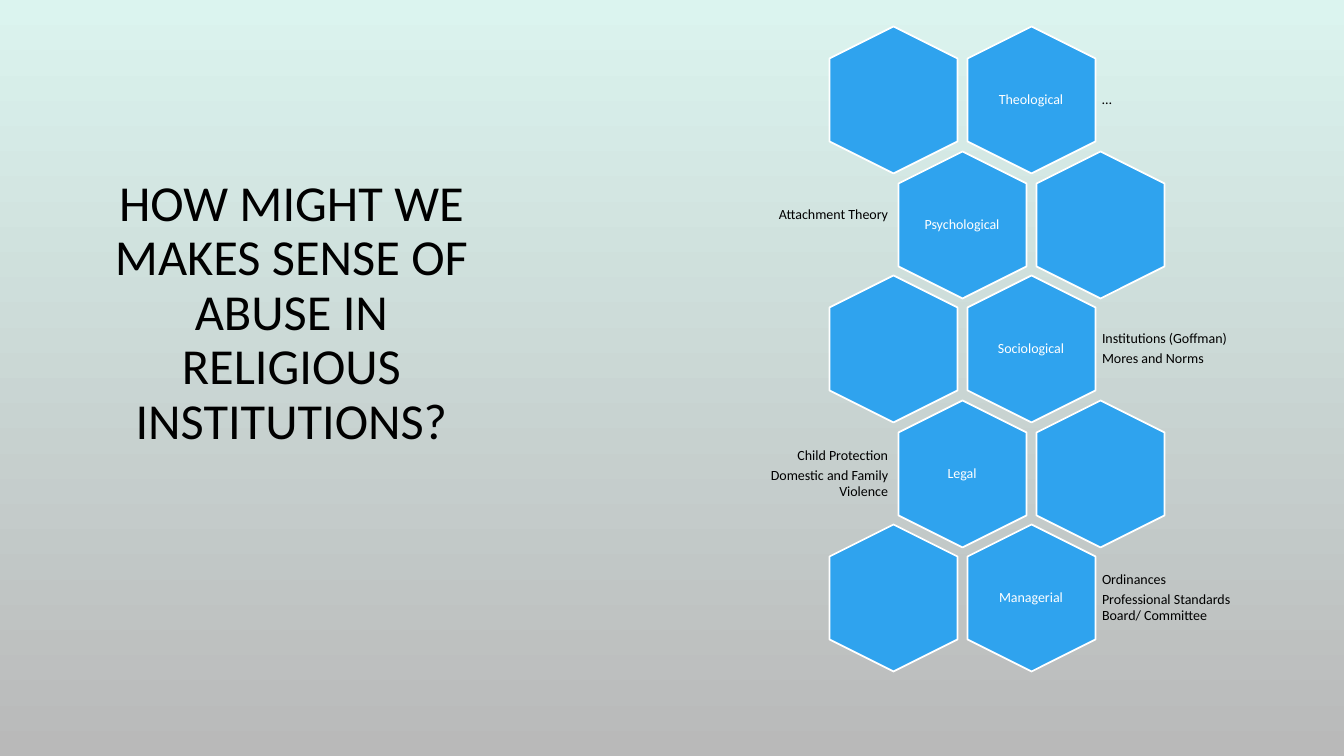
import dataclasses

import pptx
import pptx.dml.color
import pptx.enum.shapes
import pptx.enum.text
import pptx.util

ALIGN = pptx.enum.text.PP_ALIGN


@dataclasses.dataclass(frozen=True)
class Theme:
    font: str = "Calibri"
    bg_top: str = "DBF4EF"
    bg_bottom: str = "B9B9B9"
    hexagon: str = "2FA3EE"
    light: str = "FFFFFF"
    dark: str = "000000"
    title_size: int = 36
    label_size: int = 10
    outline: float = 1.25
    line_spacing: float = 0.9
    space_after: float = 3.5


def px(n):
    return pptx.util.Emu(round(n * 12192000 / 1344))


def rgb(code):
    return pptx.dml.color.RGBColor.from_string(code)


class SlideBuilder:
    def __init__(self, prs, theme):
        self.theme = theme
        self.s = prs.slides.add_slide(prs.slide_layouts[6])

    def background(self):
        fill = self.s.background.fill
        fill.gradient()
        fill.gradient_angle = 270
        for stop, code in zip(fill.gradient_stops, (self.theme.bg_top, self.theme.bg_bottom)):
            stop.color.rgb = rgb(code)

    def hexagon(self, cx, cy, w, h):
        # Drawn lying down, then turned so that a point faces up
        sp = self.s.shapes.add_shape(pptx.enum.shapes.MSO_SHAPE.HEXAGON,
                                     px(cx - w // 2), px(cy - h // 2), px(w), px(h))
        sp.rotation = 90
        sp.shadow.inherit = False
        sp.fill.solid()
        sp.fill.fore_color.rgb = rgb(self.theme.hexagon)
        sp.line.color.rgb = rgb(self.theme.light)
        sp.line.width = pptx.util.Pt(self.theme.outline)

    def text(self, x, y, w, h, lines, size, color, align, inset=4, after=0):
        tf = self.s.shapes.add_textbox(px(x), px(y), px(w), px(h)).text_frame
        tf.word_wrap = True
        tf.vertical_anchor = pptx.enum.text.MSO_ANCHOR.MIDDLE
        tf.margin_left = tf.margin_right = tf.margin_top = tf.margin_bottom = px(inset)
        for i, line in enumerate(lines):
            p = tf.add_paragraph() if i else tf.paragraphs[0]
            p.alignment = align
            p.line_spacing = self.theme.line_spacing
            p.space_after = pptx.util.Pt(after)
            r = p.add_run()
            r.text = line
            r.font.name = self.theme.font
            r.font.size = pptx.util.Pt(size)
            r.font.color.rgb = rgb(color)

    def label(self, cx, cy, name):
        self.text(cx - 44, cy - 50, 88, 100, [name], self.theme.label_size,
                  self.theme.light, ALIGN.CENTER, after=self.theme.space_after)

    def note(self, x, cy, w, lines, align):
        self.text(x, cy - 44, w, 88, lines, self.theme.label_size,
                  self.theme.dark, align, after=self.theme.space_after)


# Perspective, its notes, vertical shift of the notes
PERSPECTIVES = [
    ("Theological", ["…"], 0),
    ("Psychological", ["Attachment Theory"], -10),
    ("Sociological", ["Institutions (Goffman)", "Mores and Norms"], 0),
    ("Legal", ["Child Protection", "Domestic and Family Violence"], 0),
    ("Managerial", ["Ordinances", "Professional Standards Board/ Committee"], 0),
]


def main():
    prs = pptx.Presentation()
    prs.slide_width, prs.slide_height = px(1344), px(756)
    theme = Theme()
    slide = SlideBuilder(prs, theme)
    slide.background()

    # Title
    slide.text(101, 69, 381, 490,
               ["HOW MIGHT WE MAKES SENSE OF ABUSE IN RELIGIOUS INSTITUTIONS?"],
               theme.title_size, theme.dark, ALIGN.CENTER, inset=10)

    # Honeycomb: odd rows move right by half a cell
    for row, (name, notes, shift) in enumerate(PERSPECTIVES):
        odd = row % 2
        cy = 100 + round(124.6 * row)
        centres = [893 + 69 * odd + 138 * col for col in range(2)]
        for cx in centres:
            slide.hexagon(cx, cy, 147, 128)
        slide.label(centres[1 - odd], cy, name)
        if odd:
            slide.note(734, cy + shift, 158, notes, ALIGN.RIGHT)
        else:
            slide.note(1098, cy + shift, 163, notes, ALIGN.LEFT)

    prs.save("out.pptx")


if __name__ == "__main__":
    main()
